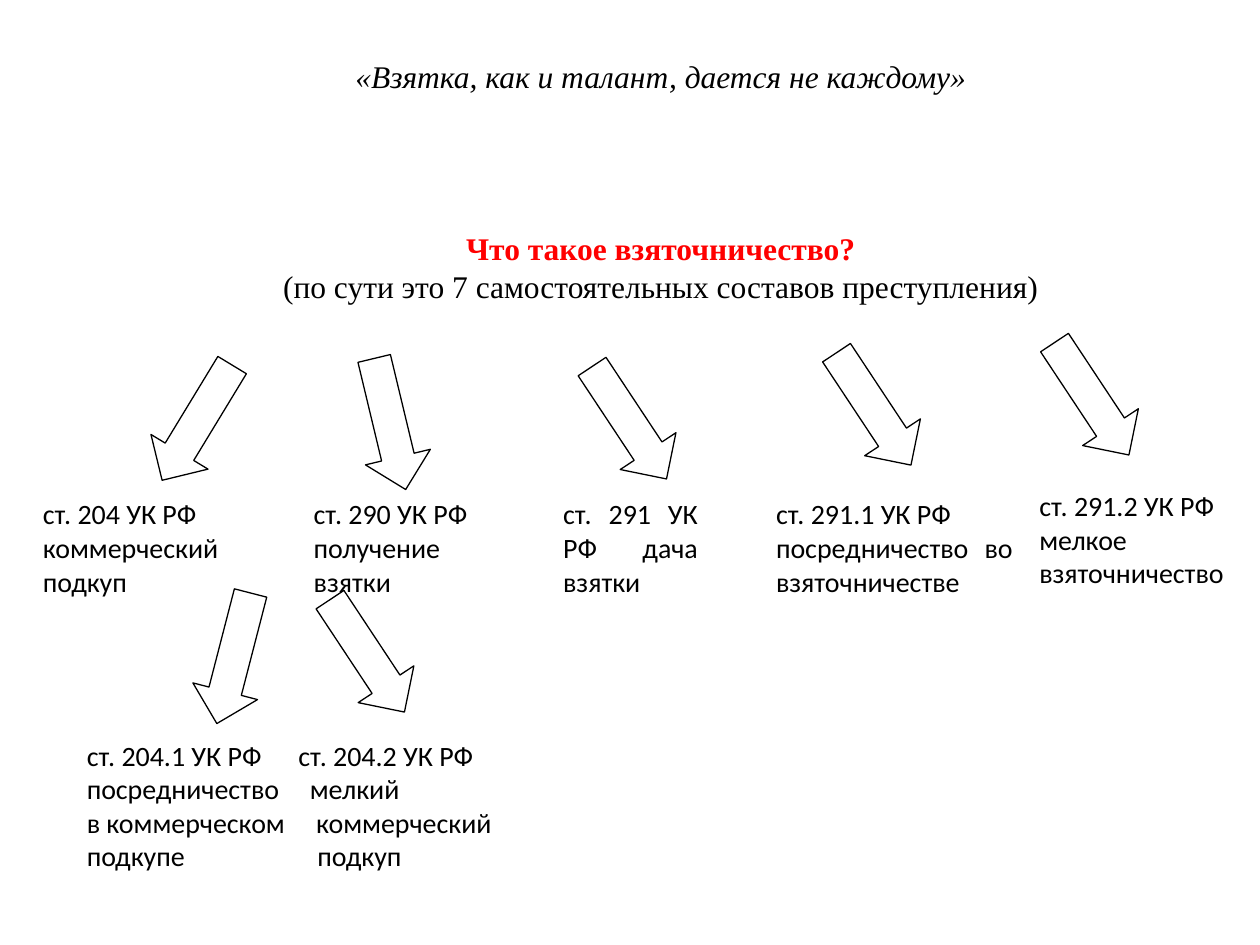
"""Build a slide that breaks bribery down into separate offences."""
from dataclasses import dataclass

from lxml import etree
from pptx import Presentation
from pptx.dml.color import RGBColor
from pptx.enum.shapes import MSO_SHAPE
from pptx.enum.text import MSO_ANCHOR, MSO_AUTO_SIZE, PP_ALIGN
from pptx.oxml.ns import qn
from pptx.util import Inches, Pt

DOWN_ARROW = MSO_SHAPE.DOWN_ARROW
TOP = MSO_ANCHOR.TOP
NO_FIT = MSO_AUTO_SIZE.NONE
LEFT, CENTER, JUSTIFY = PP_ALIGN.LEFT, PP_ALIGN.CENTER, PP_ALIGN.JUSTIFY


@dataclass(frozen=True)
class Theme:
    ink: RGBColor = RGBColor(0, 0, 0)
    paper: RGBColor = RGBColor(255, 255, 255)
    accent: RGBColor = RGBColor(255, 0, 0)
    head_font: str = "Times New Roman"
    body_font: str = "Calibri"
    head_size: Pt = Pt(18)
    body_size: Pt = Pt(16)
    line: Pt = Pt(0.75)


theme = Theme()


def write(tf, lines, font, size, align):
    tf.word_wrap = True
    tf.text = "\n".join(lines)
    for p in tf.paragraphs:
        p.alignment = align
        p.font.name = font
        p.font.size = size
        p.font.color.rgb = theme.ink


def add_text(left, top, width, height, lines, font, size, align):
    sp = s.shapes.add_textbox(Inches(left), Inches(top), Inches(width), Inches(height))
    write(sp.text_frame, lines, font, size, align)
    return sp.text_frame


prs = Presentation()
prs.slide_width, prs.slide_height = Inches(10), Inches(7.5)
s = prs.slides.add_slide(prs.slide_layouts[5])

title = s.shapes.title
title.left, title.top = Inches(0.49), Inches(1.77)
title.width, title.height = Inches(9.51), Inches(1)
tf = title.text_frame
write(tf, ["Что такое взяточничество?",
           "(по сути это 7 самостоятельных составов преступления)"],
      theme.head_font, theme.head_size, CENTER)
tf.vertical_anchor = TOP
tf.auto_size = NO_FIT
tf.paragraphs[0].font.bold = True
tf.paragraphs[0].font.color.rgb = theme.accent

tf = add_text(0.49, 0.4, 9.51, 0.71, ["«Взятка, как и талант, дается не каждому»"],
              theme.head_font, theme.head_size, CENTER)
tf.paragraphs[0].font.italic = True

articles = [
    (2.05, 0.06, 0.07, ["ст. 204 УК РФ", "коммерческий подкуп"]),
    (2.08, 0.16, 0.07, ["ст. 290 УК РФ", "получение", "взятки"]),
    (1.69, 0.06, 0.56, ["ст. 291 УК РФ дача взятки"]),
    (2.44, 0.06, 0.5, ["ст. 291.1 УК РФ", "посредничество во взяточничестве"]),
]
table = s.shapes.add_table(1, len(articles), Inches(0.28), Inches(3.95),
                           Inches(8.26), Inches(1.19)).table
table.first_row = table.horz_banding = False
for col, (width, margin_left, margin_right, lines) in enumerate(articles):
    table.columns[col].width = Inches(width)
    cell = table.cell(0, col)
    cell.fill.solid()
    cell.fill.fore_color.rgb = theme.paper
    cell.margin_left, cell.margin_right = Inches(margin_left), Inches(margin_right)
    cell.margin_top = cell.margin_bottom = 0
    write(cell.text_frame, lines, theme.body_font, theme.body_size, JUSTIFY)

arrows = [
    (1.3, 2.82, 31.3), (2.83, 2.83, -13.5), (4.73, 2.82, -33.5),
    (6.67, 2.71, -33.5), (8.4, 2.63, -33.5),
    (1.59, 4.69, 14.5), (2.65, 4.67, -33.5),
]
for left, top, angle in arrows:
    sp = s.shapes.add_shape(DOWN_ARROW, Inches(left), Inches(top), Inches(0.53), Inches(1.07))
    sp.rotation = angle
    sp.shadow.inherit = False
    sp.fill.solid()
    sp.fill.fore_color.rgb = theme.paper
    sp.line.color.rgb = theme.ink
    sp.line.width = theme.line

subtypes = [
    ("ст. 204.1 УК РФ", "ст. 204.2 УК РФ", 1.68),
    ("посредничество", "мелкий", 1.77),
    ("в коммерческом", "коммерческий", 1.82),
    ("подкупе", "подкуп", 1.83),
]
tf = add_text(0.59, 5.81, 4.25, 1.48, [f"{a}\t{b}" for a, b, stop in subtypes],
              theme.body_font, theme.body_size, LEFT)
for p, (a, b, stop) in zip(tf.paragraphs, subtypes):
    tabs = etree.Element(qn("a:tabLst"))
    etree.SubElement(tabs, qn("a:tab"), pos=str(Inches(stop)), algn="l")
    p._p.get_or_add_pPr().insert(0, tabs)

add_text(8.15, 3.83, 1.73, 0.91, ["ст. 291.2 УК РФ мелкое взяточничество"],
         theme.body_font, theme.body_size, LEFT)

prs.save("out.pptx")
